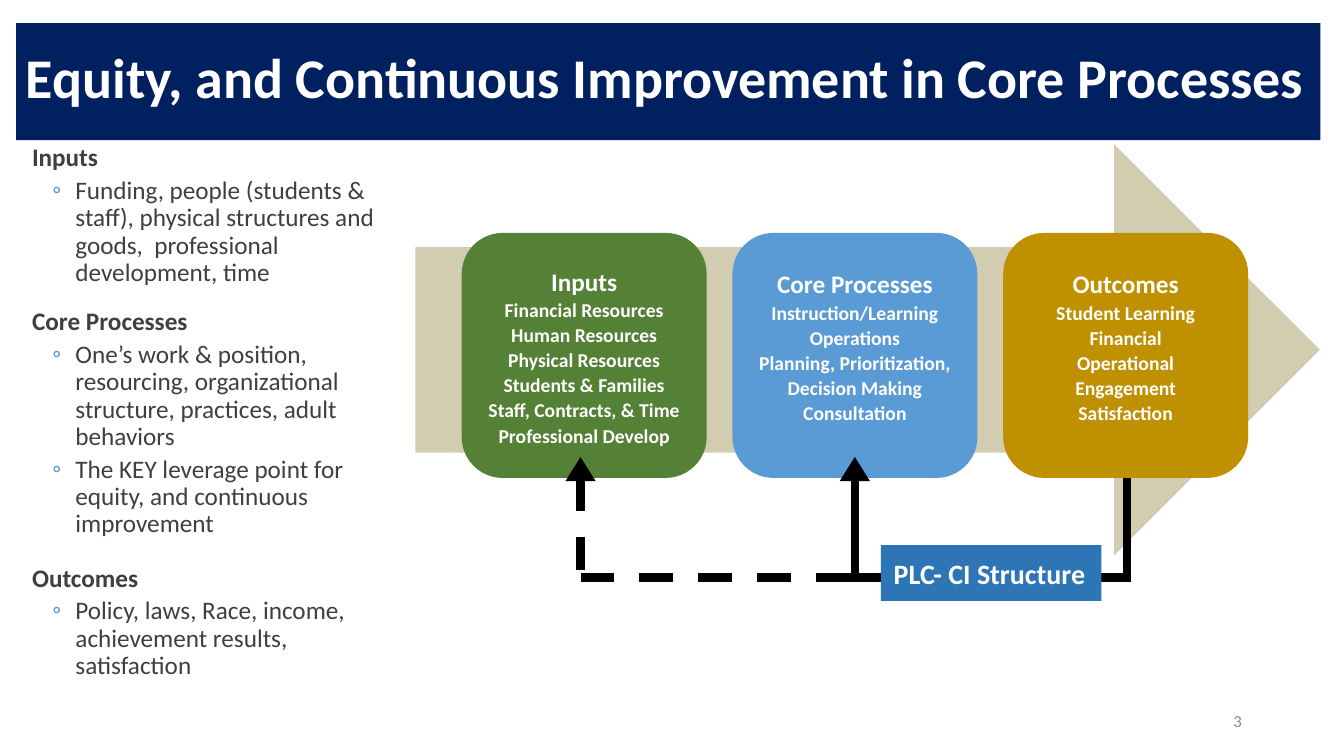
from dataclasses import dataclass

from lxml.etree import SubElement
from pptx import Presentation
from pptx.dml.color import RGBColor
from pptx.enum.dml import MSO_LINE
from pptx.enum.shapes import MSO_CONNECTOR, MSO_SHAPE
from pptx.enum.text import MSO_ANCHOR as Anchor, PP_ALIGN as Align
from pptx.oxml.ns import qn
from pptx.util import Pt

FONT = "Calibri"
COLORS = {
    "navy": "002060", "white": "FFFFFF", "text": "3F3F3F", "sand": "D2CDB0",
    "green": "548135", "sky": "5B9BD5", "gold": "BF9000", "blue": "2E75B5",
    "black": "000000", "gray": "888888",
}


@dataclass
class Box:
    left: float
    top: float
    width: float
    height: float

    def lengths(self) -> list:
        return [Pt(v) for v in (self.left, self.top, self.width, self.height)]


@dataclass
class Card:
    title: str
    items: list[str]
    fill: str
    bottom_inset: float = 3.6


@dataclass
class Section:
    title: str
    bullets: list[str]
    space_before: float


@dataclass
class Line:
    start: tuple[float, float]
    end: tuple[float, float]
    dashed: bool = False


def color(name: str) -> RGBColor:
    return RGBColor.from_string(COLORS[name])


def add_filled(slide, kind, box: Box, fill: str):
    shape = slide.shapes.add_shape(kind, *box.lengths())
    shape.shadow.inherit = False
    shape.fill.solid()
    shape.fill.fore_color.rgb = color(fill)
    shape.line.fill.background()
    return shape


def prepare_frame(shape, anchor, left: float = 7.2, bottom: float = 3.6):
    frame = shape.text_frame
    frame.word_wrap = True
    frame.vertical_anchor = anchor
    frame.margin_left, frame.margin_right = Pt(left), Pt(7.2)
    frame.margin_top, frame.margin_bottom = Pt(3.6), Pt(bottom)
    return frame


def style(paragraph, size: float, ink: str, bold: bool = False,
          align=Align.LEFT, spacing: float = 1.0) -> None:
    paragraph.alignment = align
    paragraph.line_spacing = spacing
    for run in paragraph.runs:
        run.font.name, run.font.size, run.font.bold = FONT, Pt(size), bold
        run.font.color.rgb = color(ink)


def add_bullet(paragraph) -> None:
    properties = paragraph._p.get_or_add_pPr()
    properties.set("marL", str(Pt(31)))
    properties.set("indent", str(-Pt(16.5)))
    bullet_color = SubElement(properties, qn("a:buClr"))
    SubElement(bullet_color, qn("a:srgbClr"), val=COLORS["sky"])
    SubElement(properties, qn("a:buFont"), typeface=FONT)
    SubElement(properties, qn("a:buChar"), char="◦")


def add_sections(slide, box: Box, sections: list[Section]) -> None:
    frame = prepare_frame(slide.shapes.add_textbox(*box.lengths()), Anchor.TOP)
    for index, section in enumerate(sections):
        heading = frame.add_paragraph() if index else frame.paragraphs[0]
        heading.text = section.title
        heading.space_before = Pt(section.space_before)
        style(heading, 18, "text", bold=True, spacing=0.9)
        for bullet in section.bullets:
            paragraph = frame.add_paragraph()
            paragraph.text = bullet
            add_bullet(paragraph)
            paragraph.level = 1
            paragraph.space_before = Pt(4)
            style(paragraph, 18, "text", spacing=0.9)


def add_card(slide, box: Box, card: Card) -> None:
    shape = add_filled(slide, MSO_SHAPE.ROUNDED_RECTANGLE, box, card.fill)
    shape.adjustments[0] = 0.167
    frame = prepare_frame(shape, Anchor.MIDDLE, bottom=card.bottom_inset)
    frame.text = "\n".join([card.title, *card.items])
    for index, paragraph in enumerate(frame.paragraphs):
        style(paragraph, 14 if index else 18, "white", True, Align.CENTER, 1.07)


def add_line(slide, line: Line) -> None:
    points = [Pt(v) for v in (*line.start, *line.end)]
    connector = slide.shapes.add_connector(MSO_CONNECTOR.STRAIGHT, *points)
    connector.line.width = Pt(6)
    connector.line.color.rgb = color("black")
    if line.dashed:
        connector.line.dash_style = MSO_LINE.DASH
    SubElement(connector._element.spPr, qn("a:effectLst"))


SECTIONS = [
    Section("Inputs", ["Funding, people (students & staff), physical structures and "
                       "goods,  professional development, time"], 0),
    Section("Core Processes", [
        "One’s work & position, resourcing, organizational structure, practices, "
        "adult behaviors",
        "The KEY leverage point for equity, and continuous improvement"], 16),
    Section("Outcomes", ["Policy, laws, Race, income, achievement results, "
                         "satisfaction"], 19.5),
]
CARDS = [
    Card("Inputs", ["Financial Resources", "Human Resources", "Physical Resources",
                    "Students & Families", "Staff, Contracts, & Time",
                    "Professional Develop"], "green"),
    Card("Core Processes", ["Instruction/Learning", "Operations",
                            "Planning, Prioritization, Decision Making",
                            "Consultation"], "sky", 17.6),
    Card("Outcomes", ["Student Learning", "Financial", "Operational", "Engagement",
                      "Satisfaction"], "gold", 17.6),
]
CARD_LEFT, CARD_TOP, CARD_SIZE, CARD_PITCH = 329.8, 166.4, 175, 193.4
INPUTS_X, CORE_X, OUTCOMES_X = 414.7, 610.6, 805
CARD_BOTTOM, LOOP_Y = 341.3, 412.6
LINES = [
    Line((CORE_X, CARD_BOTTOM), (CORE_X, LOOP_Y)),
    Line((OUTCOMES_X, CARD_BOTTOM), (OUTCOMES_X, LOOP_Y + 3)),
    Line((OUTCOMES_X, LOOP_Y), (605.5, LOOP_Y)),
    Line((INPUTS_X, CARD_BOTTOM), (INPUTS_X, LOOP_Y + 3), True),
    Line((INPUTS_X, LOOP_Y), (618.5, LOOP_Y), True),
]


def main() -> None:
    presentation = Presentation()
    presentation.slide_width, presentation.slide_height = Pt(960), Pt(540)
    slide = presentation.slides.add_slide(presentation.slide_layouts[6])

    # Title band
    band = add_filled(slide, MSO_SHAPE.RECTANGLE, Box(11.5, 16.6, 931.7, 83.5), "navy")
    frame = prepare_frame(band, Anchor.MIDDLE)
    frame.text = "Equity, and Continuous Improvement in Core Processes"
    style(frame.paragraphs[0], 40, "white", bold=True, spacing=0.85)

    # Explanations on the left
    add_sections(slide, Box(15.8, 100, 262, 417), SECTIONS)

    # Process arrow and its three stages
    add_filled(slide, MSO_SHAPE.RIGHT_ARROW, Box(296.8, 103, 646, 293.8), "sand")
    for index, card in enumerate(CARDS):
        left = CARD_LEFT + index * CARD_PITCH
        add_card(slide, Box(left, CARD_TOP, CARD_SIZE, CARD_SIZE), card)

    # Feedback loop
    for line in LINES:
        add_line(slide, line)
    for x in (INPUTS_X, CORE_X):
        add_filled(slide, MSO_SHAPE.ISOSCELES_TRIANGLE,
                   Box(x - 10.8, 326.4, 21.6, 17.2), "black")
    label = add_filled(slide, MSO_SHAPE.RECTANGLE, Box(629.2, 389.4, 157.6, 39.8), "blue")
    frame = prepare_frame(label, Anchor.MIDDLE, left=9.2)
    frame.text = "PLC- CI Structure"
    style(frame.paragraphs[0], 20, "white", bold=True)

    # Slide number
    number = slide.shapes.add_textbox(*Box(678.2, 500.4, 216, 28.8).lengths())
    frame = prepare_frame(number, Anchor.MIDDLE)
    frame.text = "3"
    style(frame.paragraphs[0], 12, "gray", align=Align.RIGHT)

    presentation.save("out.pptx")


if __name__ == "__main__":
    main()
